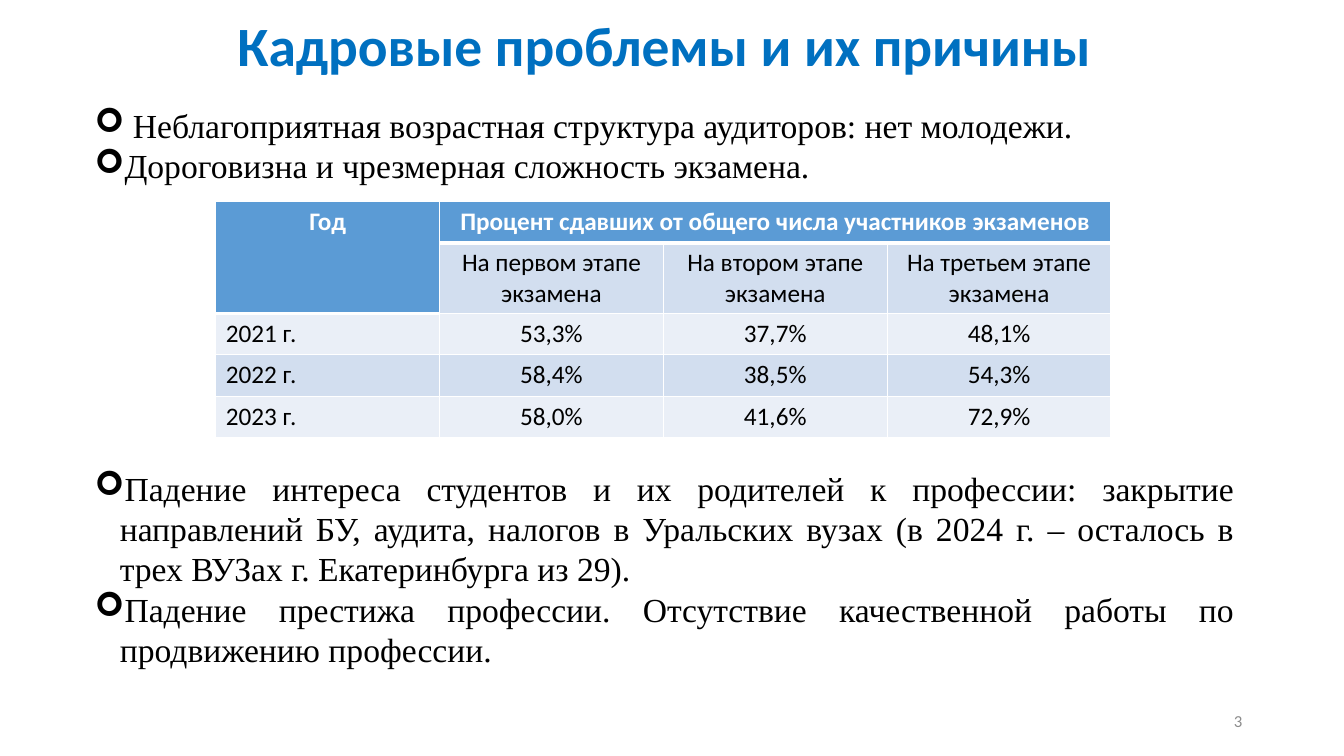
from typing import NamedTuple

from lxml import etree
from pptx import Presentation
from pptx import util as u
from pptx.dml.color import RGBColor
from pptx.enum import text
from pptx.oxml import ns

PX = 9144  # 100 px to the inch
COLORS = {
    "title": "0070C0",
    "black": "000000",
    "white": "FFFFFF",
    "header": "5B9BD5",
    "band_dark": "D2DEEF",
    "band_light": "EAEFF7",
    "number": "8C8C8C",
}
ALIGN = text.PP_ALIGN
ANCHOR = text.MSO_ANCHOR
BODY_LINE = 28.8  # points
TABLE_GAP_LINES = 7


class Box(NamedTuple):
    left: int
    top: int
    width: int
    height: int

    def emu(self) -> list[int]:
        return [side * PX for side in self]


class Bullet(NamedTuple):
    words: str
    lines_before: int = 0


TITLE_BOX = Box(84, 12, 1150, 72)
BODY_BOX = Box(84, 99, 1150, 601)
TABLE_BOX = Box(214, 200, 888, 234)
NUMBER_BOX = Box(942, 695, 300, 40)

BULLETS = [
    Bullet(" Неблагоприятная возрастная структура аудиторов: нет молодежи."),
    Bullet("Дороговизна и чрезмерная сложность экзамена."),
    Bullet("Падение интереса студентов и их родителей к профессии: закрытие "
           "направлений БУ, аудита, налогов в Уральских вузах (в 2024 г. – "
           "осталось в трех ВУЗах г. Екатеринбурга из 29).", TABLE_GAP_LINES),
    Bullet("Падение престижа профессии. Отсутствие качественной работы по "
           "продвижению профессии."),
]

ROW_HEIGHTS = [41, 70, 41, 41, 41]
EXAM_ROWS = [
    ["Год", "Процент сдавших от общего числа участников экзаменов", "", ""],
    ["", "На первом этапе экзамена", "На втором этапе экзамена", "На третьем этапе экзамена"],
    ["2021 г.", "53,3%", "37,7%", "48,1%"],
    ["2022 г.", "58,4%", "38,5%", "54,3%"],
    ["2023 г.", "58,0%", "41,6%", "72,9%"],
]


def write(paragraph, words: str, *, size: float, color: str, font: str = "Calibri",
          bold: bool = False, align=ALIGN.LEFT, spacing=None) -> None:
    paragraph.alignment = align
    if spacing is not None:
        paragraph.line_spacing = spacing
    run = paragraph.add_run()
    run.text = words
    run.font.size = u.Pt(size)
    run.font.name = font
    run.font.bold = bold
    run.font.color.rgb = RGBColor.from_string(COLORS[color])


def add_frame(slide, box: Box, anchor=ANCHOR.TOP):
    frame = slide.shapes.add_textbox(*box.emu()).text_frame
    frame.word_wrap = True
    frame.vertical_anchor = anchor
    return frame


def set_bullet(paragraph) -> None:
    properties = paragraph._p.get_or_add_pPr()
    properties.set("marL", str(25 * PX))
    properties.set("indent", str(-25 * PX))
    etree.SubElement(properties, ns.qn("a:buFont"), typeface="Wingdings")
    etree.SubElement(properties, ns.qn("a:buChar"), char="➢")


def set_borders(cell, bottom_points: int) -> None:
    properties = cell._tc.get_or_add_tcPr()
    for side, points in (("L", 1), ("R", 1), ("T", 1), ("B", bottom_points)):
        line = etree.SubElement(properties, ns.qn(f"a:ln{side}"), w=str(u.Pt(points)))
        fill = etree.SubElement(line, ns.qn("a:solidFill"))
        etree.SubElement(fill, ns.qn("a:srgbClr"), val=COLORS["white"])


def add_bullets(slide) -> None:
    frame = add_frame(slide, BODY_BOX)
    for index, bullet in enumerate(BULLETS):
        paragraph = frame.add_paragraph() if index else frame.paragraphs[0]
        write(paragraph, bullet.words, size=24, color="black", font="Times New Roman",
              align=ALIGN.JUSTIFY, spacing=u.Pt(BODY_LINE))
        paragraph.space_before = u.Pt(bullet.lines_before * BODY_LINE)
        set_bullet(paragraph)


def add_exam_table(slide) -> None:
    columns = len(EXAM_ROWS[0])
    table = slide.shapes.add_table(len(EXAM_ROWS), columns, *TABLE_BOX.emu()).table
    table.first_row = table.horz_banding = False
    for column in table.columns:
        column.width = TABLE_BOX.width // columns * PX
    for row, height in zip(table.rows, ROW_HEIGHTS):
        row.height = height * PX
    table.cell(0, 0).merge(table.cell(1, 0))
    table.cell(0, 1).merge(table.cell(0, columns - 1))

    for row_index, row in enumerate(EXAM_ROWS):
        for column_index, words in enumerate(row):
            cell = table.cell(row_index, column_index)
            header = row_index == 0 or (row_index == 1 and column_index == 0)
            band = "band_dark" if row_index % 2 else "band_light"
            set_borders(cell, 3 if header else 1)
            cell.fill.solid()
            cell.fill.fore_color.rgb = RGBColor.from_string(COLORS["header" if header else band])
            if words:
                year = row_index > 1 and column_index == 0
                write(cell.text_frame.paragraphs[0], words, size=18, bold=header,
                      color="white" if header else "black",
                      align=ALIGN.LEFT if year else ALIGN.CENTER)


def main() -> None:
    presentation = Presentation()
    presentation.slide_width = 1333 * PX
    presentation.slide_height = 750 * PX
    slide = presentation.slides.add_slide(presentation.slide_layouts[6])

    # Title
    title = add_frame(slide, TITLE_BOX, ANCHOR.MIDDLE)
    write(title.paragraphs[0], "Кадровые проблемы и их причины", size=39.6,
          color="title", bold=True, align=ALIGN.CENTER, spacing=0.9)

    # Causes, with room left for the table
    add_bullets(slide)
    add_exam_table(slide)

    # Slide number
    number = add_frame(slide, NUMBER_BOX, ANCHOR.MIDDLE)
    write(number.paragraphs[0], "3", size=12, color="number", align=ALIGN.RIGHT)

    presentation.save("out.pptx")


if __name__ == "__main__":
    main()
